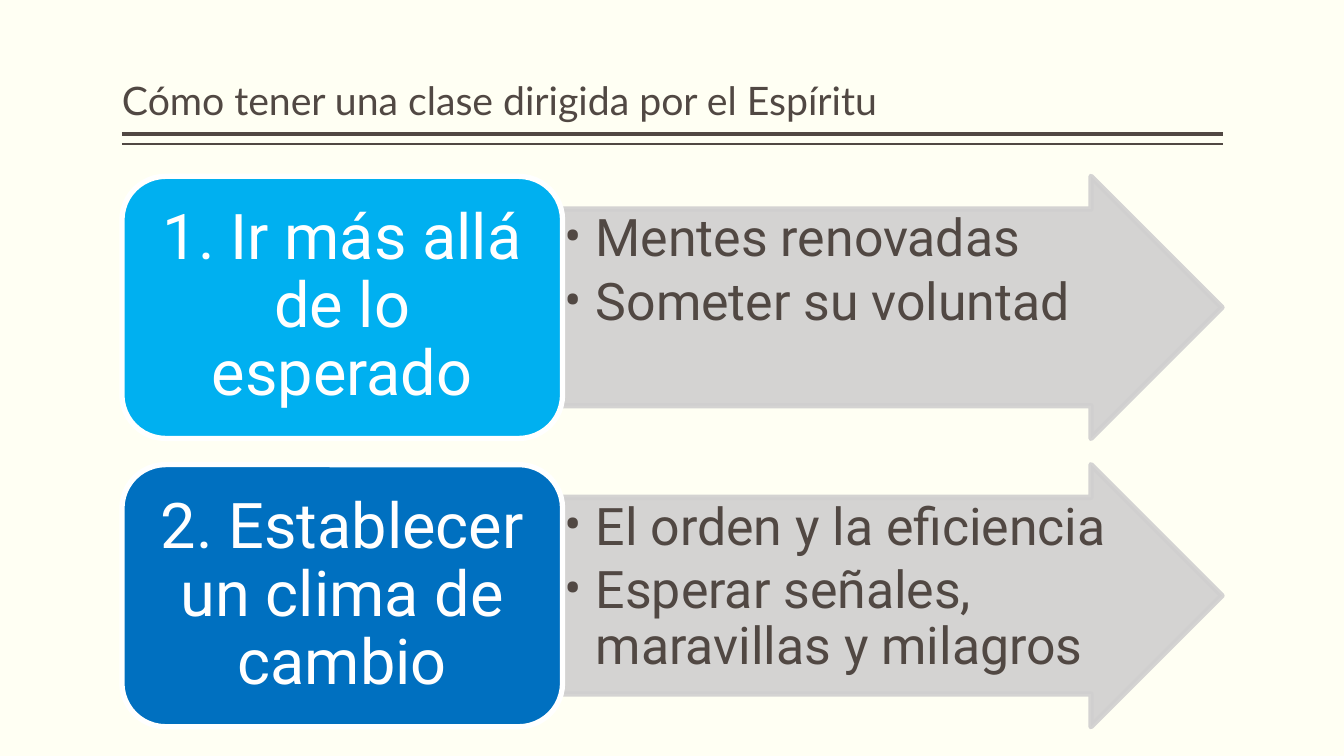
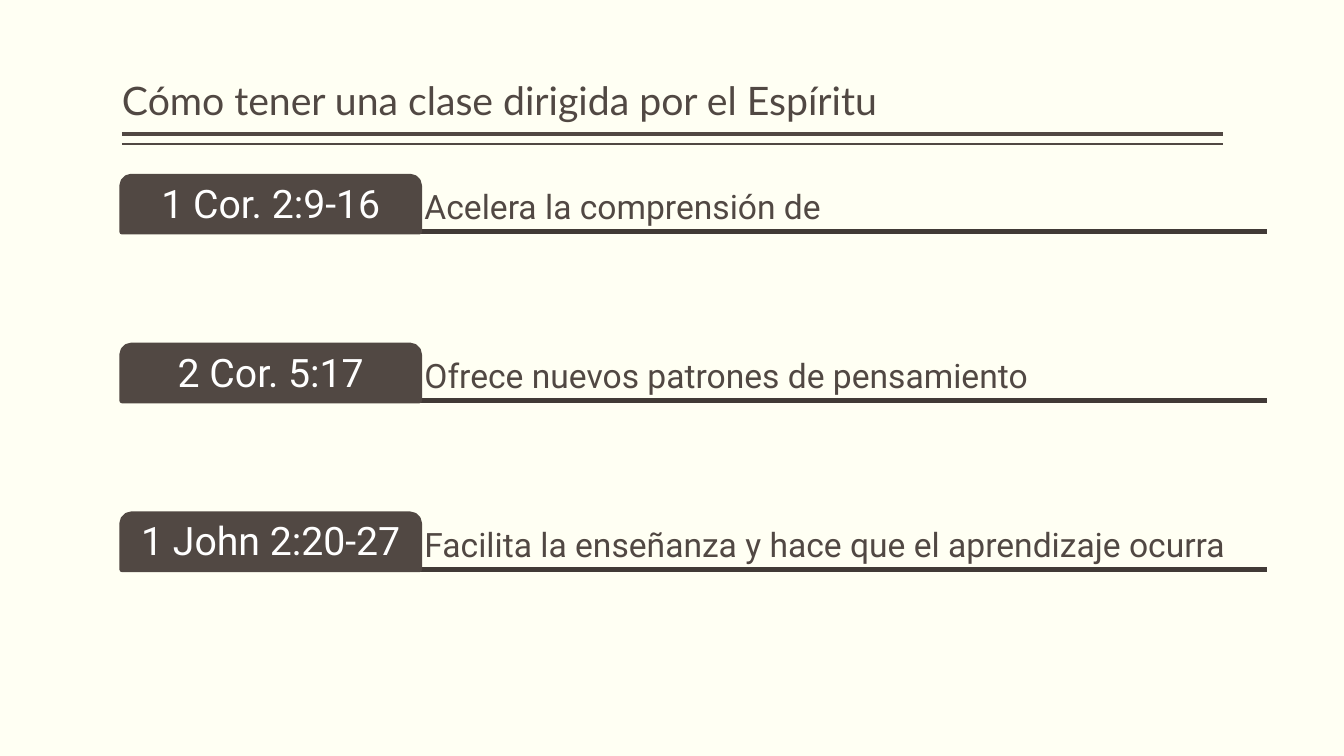
from lxml.etree import SubElement
from pptx import Presentation
from pptx.dml.color import RGBColor
from pptx.enum.shapes import MSO_CONNECTOR, MSO_SHAPE
from pptx.enum.text import MSO_ANCHOR, MSO_AUTO_SIZE, PP_ALIGN
from pptx.oxml.ns import qn
from pptx.util import Inches, Pt

INK, DARK_INK, WHITE = "514843", "413A36", "FFFFFF"
PAPER, ARROW_GREY = "FFFFF3", "D0CFCF"
HEADING_FONT, BODY_FONT = "Lato", "Roboto"
TITLE = "Cómo tener una clase dirigida por el Espíritu"

LEFT, RIGHT, TOP = 1.21, 12.13, 1.75
HEADER_RULES = [(1.33, 3), (1.43, 1)]
EDGE = 3.78

STEPS = [
    ("1. Ir más allá de lo esperado", "00B0F0",
     ["Mentes renovadas", "Someter su voluntad"]),
    ("2. Establecer un clima de cambio", "0070C0",
     ["El orden y la eficiencia", "Esperar señales, maravillas y milagros"]),
]
STEP_WIDTH, STEP_HEIGHT, STEP_PITCH = 4.37, 2.6, 2.86
ARROW_LEFT, ARROW_WIDTH, SHAFT_SHARE = 5.57, 6.55, 0.75
POINTS_WIDTH, POINTS_HEIGHT = 5.57, STEP_HEIGHT * SHAFT_SHARE

VERSES = [
    ("1 Cor. 2:9-16", "Acelera la comprensión de"),
    ("2 Cor. 5:17", "Ofrece nuevos patrones de pensamiento"),
    ("1 John 2:20-27", "Facilita la enseñanza y hace que el aprendizaje ocurra"),
]
TAB_WIDTH, TAB_HEIGHT, VERSE_PITCH, VERSE_RIGHT = 2.95, 0.55, 1.675, 12.57


def rgb(color):
    return RGBColor.from_string(color)


def set_attributes(target, values):
    for name, value in values.items():
        setattr(target, name, value)


def write(shape, lines, size, color=INK, font=BODY_FONT, anchor=MSO_ANCHOR.MIDDLE,
          align=PP_ALIGN.LEFT, margins=(0.05, 0.05, 0.05, 0.05), space_after=0):
    """Fill a shape with paragraphs; margins run left, top, right, bottom."""
    frame = shape.text_frame
    sides = ("margin_left", "margin_top", "margin_right", "margin_bottom")
    set_attributes(frame, dict(zip(sides, map(Inches, margins))))
    set_attributes(frame, {"word_wrap": True, "auto_size": MSO_AUTO_SIZE.NONE,
                           "vertical_anchor": anchor})
    frame.text = "\n".join(lines)
    for paragraph in frame.paragraphs:
        set_attributes(paragraph, {"alignment": align, "line_spacing": 0.9,
                                   "space_before": Pt(0), "space_after": Pt(space_after)})
        run_font = paragraph.runs[0].font
        set_attributes(run_font, {"name": font, "size": Pt(size)})
        run_font.color.rgb = rgb(color)


def add_bullets(shape, indent):
    for paragraph in shape.text_frame.paragraphs:
        properties = paragraph._p.get_or_add_pPr()
        properties.set("marL", str(Inches(indent)))
        properties.set("indent", str(-Inches(indent)))
        SubElement(properties, qn("a:buFont"), typeface=BODY_FONT)
        SubElement(properties, qn("a:buChar"), char="•")


def add_text_box(slide, left, top, width, height):
    return slide.shapes.add_textbox(*map(Inches, (left, top, width, height)))


def add_box(slide, kind, left, top, width, height, fill, line, adjustments=()):
    shape = slide.shapes.add_shape(kind, *map(Inches, (left, top, width, height)))
    shape.shadow.inherit = False
    shape.fill.solid()
    shape.fill.fore_color.rgb = rgb(fill)
    shape.line.color.rgb = rgb(line)
    shape.line.width = Pt(EDGE)
    for index, value in enumerate(adjustments):
        shape.adjustments[index] = value
    return shape


def set_opacity(shape, percent):
    for color in shape.element.spPr.iter(qn("a:srgbClr")):
        SubElement(color, qn("a:alpha"), val=str(percent * 1000))


def add_rule(slide, right, y, color, width):
    rule = slide.shapes.add_connector(
        MSO_CONNECTOR.STRAIGHT, *map(Inches, (LEFT, y, right, y)))
    rule.line.color.rgb = rgb(color)
    rule.line.width = Pt(width)
    SubElement(rule.element.spPr, qn("a:effectLst"))


def add_titled_slide(presentation):
    slide = presentation.slides.add_slide(presentation.slide_layouts[5])
    for y, width in HEADER_RULES:
        add_rule(slide, RIGHT, y, INK, width)
    title = slide.shapes.title
    set_attributes(title, {"left": Inches(LEFT), "top": Inches(0.08),
                           "width": Inches(RIGHT - LEFT), "height": Inches(1.2)})
    write(title, [TITLE], 28, font=HEADING_FONT, anchor=MSO_ANCHOR.BOTTOM,
          margins=(0, 0.05, 0, 0.05))
    return slide


def build_steps(presentation):
    slide = add_titled_slide(presentation)
    for row, (heading, color, points) in enumerate(STEPS):
        top = TOP + row * STEP_PITCH
        arrow = add_box(slide, MSO_SHAPE.RIGHT_ARROW, ARROW_LEFT, top, ARROW_WIDTH,
                        STEP_HEIGHT, ARROW_GREY, ARROW_GREY, (SHAFT_SHARE, 0.5))
        set_opacity(arrow, 90)
        points_top = top + (STEP_HEIGHT - POINTS_HEIGHT) / 2
        points_box = add_text_box(slide, ARROW_LEFT, points_top,
                                  POINTS_WIDTH, POINTS_HEIGHT)
        write(points_box, points, 37, anchor=MSO_ANCHOR.TOP,
              margins=(0.03, 0.03, 0.03, 0.03), space_after=5.5)
        add_bullets(points_box, 0.31)
        step = add_box(slide, MSO_SHAPE.ROUNDED_RECTANGLE, LEFT, top, STEP_WIDTH,
                       STEP_HEIGHT, color, WHITE)
        write(step, [heading], 45, WHITE, align=PP_ALIGN.CENTER,
              margins=(0.19, 0.09, 0.19, 0.09))


def build_verses(presentation):
    slide = add_titled_slide(presentation)
    tab_right = LEFT + TAB_WIDTH
    for row, (verse, effect) in enumerate(VERSES):
        top = TOP + row * VERSE_PITCH
        add_rule(slide, VERSE_RIGHT, top + TAB_HEIGHT, DARK_INK, EDGE)
        effect_box = add_text_box(slide, tab_right, top,
                                  VERSE_RIGHT - tab_right, TAB_HEIGHT)
        write(effect_box, [effect], 24, anchor=MSO_ANCHOR.BOTTOM)
        tab = add_box(slide, MSO_SHAPE.ROUND_2_SAME_RECTANGLE, LEFT, top, TAB_WIDTH,
                      TAB_HEIGHT, INK, INK, (0.17, 0))
        write(tab, [verse], 28, WHITE, align=PP_ALIGN.CENTER,
              margins=(0.06, 0.06, 0.06, 0.06))


def main():
    presentation = Presentation()
    set_attributes(presentation, {"slide_width": Inches(13.33),
                                  "slide_height": Inches(7.5)})
    background = presentation.slide_master.background.fill
    background.solid()
    background.fore_color.rgb = rgb(PAPER)
    build_steps(presentation)
    build_verses(presentation)
    presentation.save("out.pptx")


if __name__ == "__main__":
    main()
